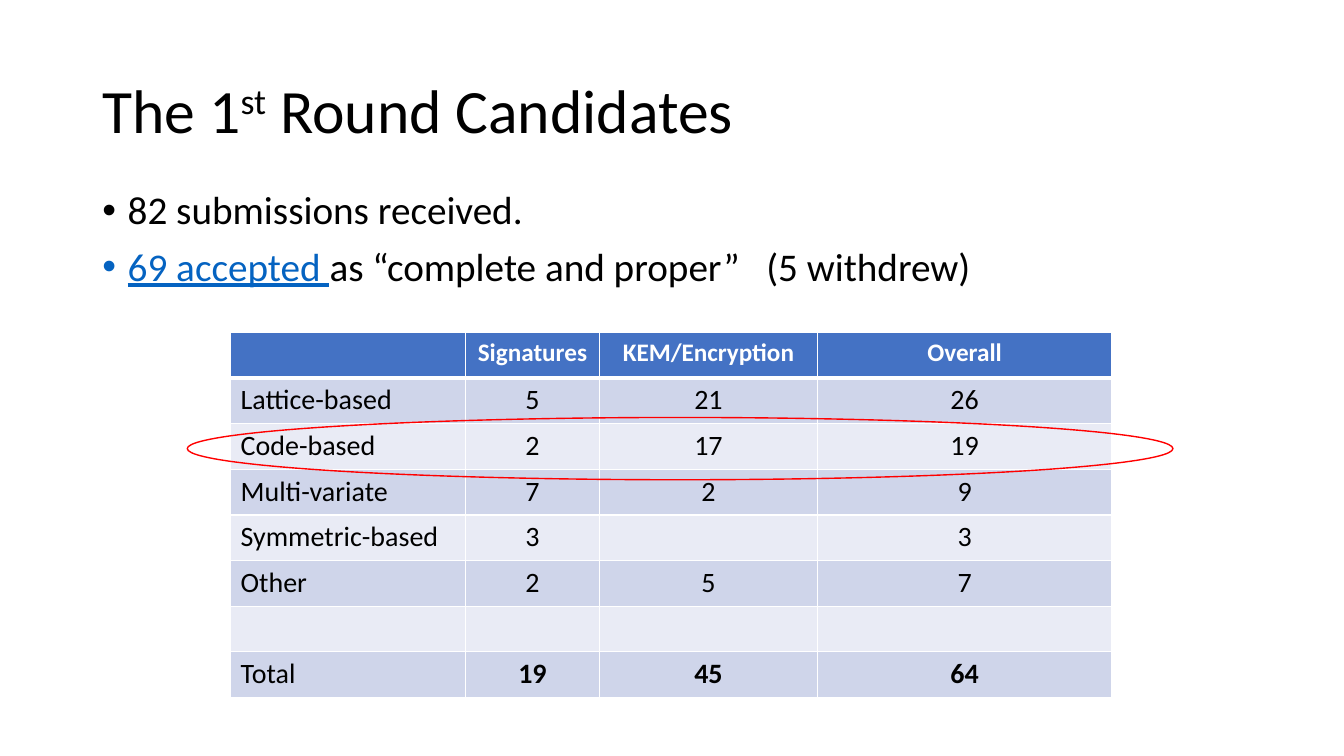
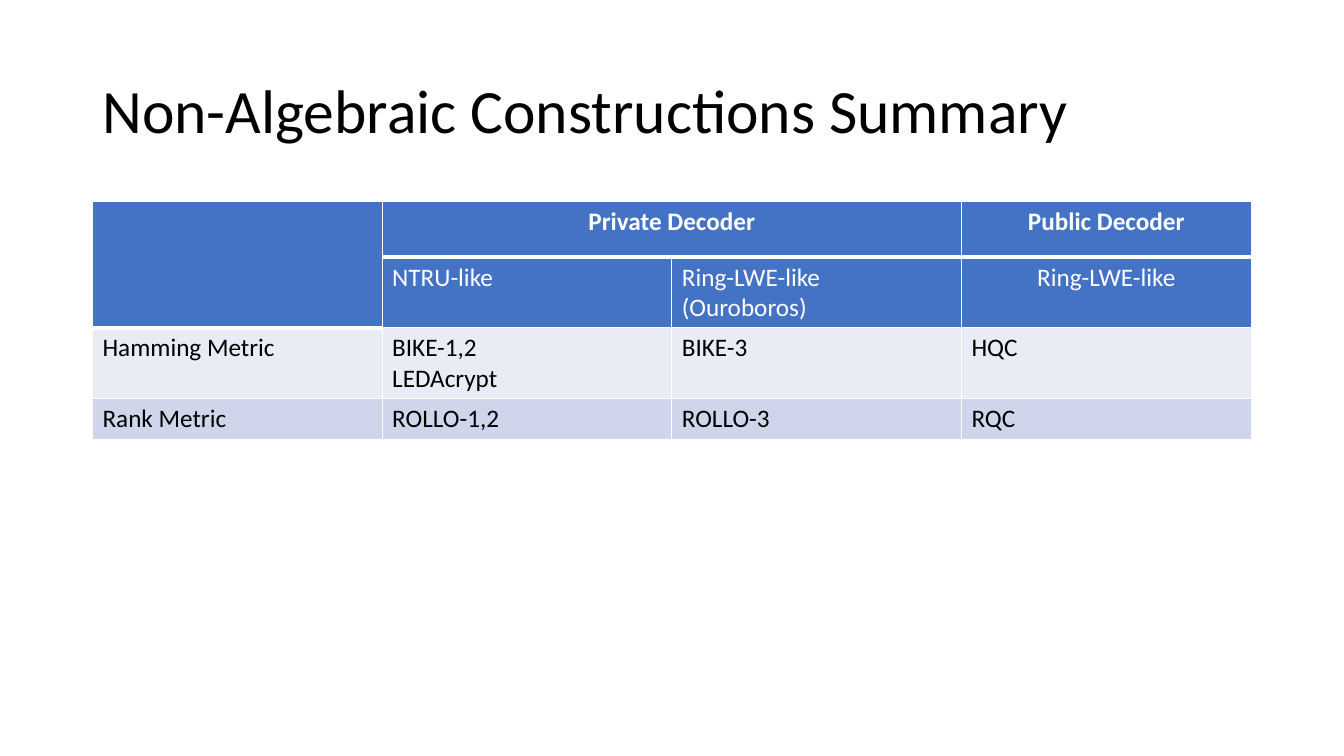
from lxml.etree import SubElement
from pptx import Presentation
from pptx.dml.color import RGBColor
from pptx.enum.shapes import MSO_SHAPE
from pptx.enum.text import MSO_ANCHOR, PP_ALIGN
from pptx.oxml.ns import qn
from pptx.util import Cm, Pt

FONT = "Calibri"
BLACK, WHITE, LINK, RED = "000000", "FFFFFF", "0563C1", "FF0000"
BLUE, DARK_BAND, LIGHT_BAND = "4472C4", "CFD5EA", "E9EBF5"

TITLE_AREA = (2.33, 1.01, 29.21, 3.68)
BODY_AREA = (2.33, 4.69, 29.21, 12.09)
TITLE_FORMAT = {"size": Pt(44), "color": BLACK}
BODY_FORMAT = {"size": Pt(28), "color": BLACK}
LINK_FORMAT = BODY_FORMAT | {"color": LINK, "underline": True}
HEADER_FORMAT = {"size": Pt(18), "color": WHITE}
SMALL_FORMAT = {"size": Pt(18), "color": BLACK}
LARGE_FORMAT = {"size": Pt(20), "color": BLACK}
CELL_LOOKS = {
    "l": (PP_ALIGN.LEFT, False),
    "c": (PP_ALIGN.CENTER, False),
    "B": (PP_ALIGN.CENTER, True),
}

CANDIDATES_TITLE = [
    ("The 1", TITLE_FORMAT),
    ("st", TITLE_FORMAT | {"baseline": 30000}),
    (" Round Candidates", TITLE_FORMAT),
]
CANDIDATES_BULLETS = [
    [("82 submissions received.", BODY_FORMAT)],
    [("69 accepted ", LINK_FORMAT),
     ("as “complete and proper”   (5 withdrew)", BODY_FORMAT)],
]
CANDIDATES_TABLE = {
    "corner": (5.81, 8.38),
    "columns": [5.92, 3.38, 5.49, 7.42],
    "row_heights": [1.15] * 8,
    "rows": [
        (BLUE, HEADER_FORMAT, "lBBB", ["", "Signatures", "KEM/Encryption", "Overall"]),
        (DARK_BAND, LARGE_FORMAT, "lccc", ["Lattice-based", "5", "21", "26"]),
        (LIGHT_BAND, LARGE_FORMAT, "lccc", ["Code-based", "2", "17", "19"]),
        (DARK_BAND, LARGE_FORMAT, "lccc", ["Multi-variate", "7", "2", "9"]),
        (LIGHT_BAND, LARGE_FORMAT, "lccc", ["Symmetric-based", "3", "", "3"]),
        (DARK_BAND, LARGE_FORMAT, "lccc", ["Other", "2", "5", "7"]),
        (LIGHT_BAND, LARGE_FORMAT, "lccc", ["", "", "", ""]),
        (DARK_BAND, LARGE_FORMAT, "lBBB", ["Total", "19", "45", "64"]),
    ],
    "merges": [],
}
CODE_BASED_RING = (4.72, 10.52, 24.84, 1.57)

SUMMARY_TITLE = [("Non-Algebraic Constructions Summary", TITLE_FORMAT)]
SUMMARY_TABLE = {
    "corner": (2.33, 5.08),
    "columns": [7.3] * 4,
    "row_heights": [1.4, 1.4, 1.03, 1.03],
    "rows": [
        (BLUE, HEADER_FORMAT, "lBBB", ["", "Private Decoder", "", "Public Decoder"]),
        (BLUE, HEADER_FORMAT, "lllc",
         ["", "NTRU-like", "Ring-LWE-like\n(Ouroboros)", "Ring-LWE-like"]),
        (LIGHT_BAND, SMALL_FORMAT, "llll",
         ["Hamming Metric", "BIKE-1,2\nLEDAcrypt", "BIKE-3", "HQC"]),
        (DARK_BAND, SMALL_FORMAT, "llll", ["Rank Metric", "ROLLO-1,2", "ROLLO-3", "RQC"]),
    ],
    "merges": [((0, 0), (1, 0)), ((0, 1), (0, 2))],
}


def rgb(value):
    """Turn a hex string into a colour."""
    return RGBColor.from_string(value)


def lengths(values):
    """Turn numbers in centimetres into lengths."""
    return [Cm(value) for value in values]


def format_span(span, values):
    """Apply a dict of format values to a run."""
    span.font.name = FONT
    for name, value in values.items():
        if name == "color":
            span.font.color.rgb = rgb(value)
        elif name == "baseline":
            span._r.get_or_add_rPr().set(name, str(value))
        else:
            setattr(span.font, name, value)


def add_bullet(para):
    """Give a paragraph a hanging round bullet."""
    properties = para._p.get_or_add_pPr()
    properties.set("marL", str(Cm(0.64)))
    properties.set("indent", str(-Cm(0.64)))
    SubElement(properties, qn("a:buFont"), typeface="Arial")
    SubElement(properties, qn("a:buChar"), char="•")


def add_text(page, area, paragraphs, anchor=MSO_ANCHOR.TOP, bulleted=False):
    """Add a wrapping text box made of formatted spans."""
    frame = page.shapes.add_textbox(*lengths(area)).text_frame
    frame.word_wrap = True
    frame.vertical_anchor = anchor
    for index, spans in enumerate(paragraphs):
        para = frame.add_paragraph() if index else frame.paragraphs[0]
        para.line_spacing = 0.9
        if bulleted:
            para.space_before = Pt(10)
            add_bullet(para)
        for text, values in spans:
            span = para.add_run()
            span.text = text
            format_span(span, values)


def set_borders(cell, top, bottom):
    """Draw white borders of the given top and bottom widths in points."""
    properties = cell._tc.get_or_add_tcPr()
    for side, width in (("L", 1), ("R", 1), ("T", top), ("B", bottom)):
        line = SubElement(properties, qn(f"a:ln{side}"), w=str(Pt(width)))
        fill = SubElement(line, qn("a:solidFill"))
        SubElement(fill, qn("a:srgbClr"), val=WHITE)


def fill_cell(cell, text, color, values, look):
    """Set the fill, text and alignment of one cell."""
    cell.fill.solid()
    cell.fill.fore_color.rgb = rgb(color)
    cell.text = text
    alignment, bold = CELL_LOOKS[look]
    for para in cell.text_frame.paragraphs:
        para.alignment = alignment
        for span in para.runs:
            format_span(span, values | {"bold": bold})


def add_grid(page, content):
    """Add a table with a heavy rule under its header cells."""
    rows, columns, heights = (content[key] for key in ("rows", "columns", "row_heights"))
    size = (sum(columns), sum(heights))
    table = page.shapes.add_table(
        len(rows), len(columns), *lengths(content["corner"] + size)).table
    table.first_row = table.horz_banding = False
    for column, width in zip(table.columns, columns):
        column.width = Cm(width)
    for row, height in zip(table.rows, heights):
        row.height = Cm(height)

    ruled = {(0, column) for column in range(len(columns))}
    ruled |= {end for start, end in content["merges"] if start[0] == 0}
    for r, (color, values, looks, texts) in enumerate(rows):
        for c, (look, text) in enumerate(zip(looks, texts)):
            cell = table.cell(r, c)
            set_borders(cell, 3 if (r - 1, c) in ruled else 1, 3 if (r, c) in ruled else 1)
            fill_cell(cell, text, color, values, look)
    for start, end in content["merges"]:
        table.cell(*start).merge(table.cell(*end))


def add_ring(page, area):
    """Add a red outlined ellipse."""
    ring = page.shapes.add_shape(MSO_SHAPE.OVAL, *lengths(area))
    ring.shadow.inherit = False
    ring.fill.background()
    ring.line.color.rgb = rgb(RED)
    ring.line.width = Pt(1)


def add_page(deck, title):
    """Add a blank slide with the shared title style."""
    page = deck.slides.add_slide(deck.slide_layouts[6])
    add_text(page, TITLE_AREA, [title], MSO_ANCHOR.MIDDLE)
    return page


def main():
    """Build and save the deck."""
    deck = Presentation()
    deck.slide_width, deck.slide_height = lengths((33.87, 19.05))

    candidates = add_page(deck, CANDIDATES_TITLE)
    add_text(candidates, BODY_AREA, CANDIDATES_BULLETS, bulleted=True)
    add_grid(candidates, CANDIDATES_TABLE)
    add_ring(candidates, CODE_BASED_RING)

    summary = add_page(deck, SUMMARY_TITLE)
    add_grid(summary, SUMMARY_TABLE)

    deck.save("out.pptx")


if __name__ == "__main__":
    main()
